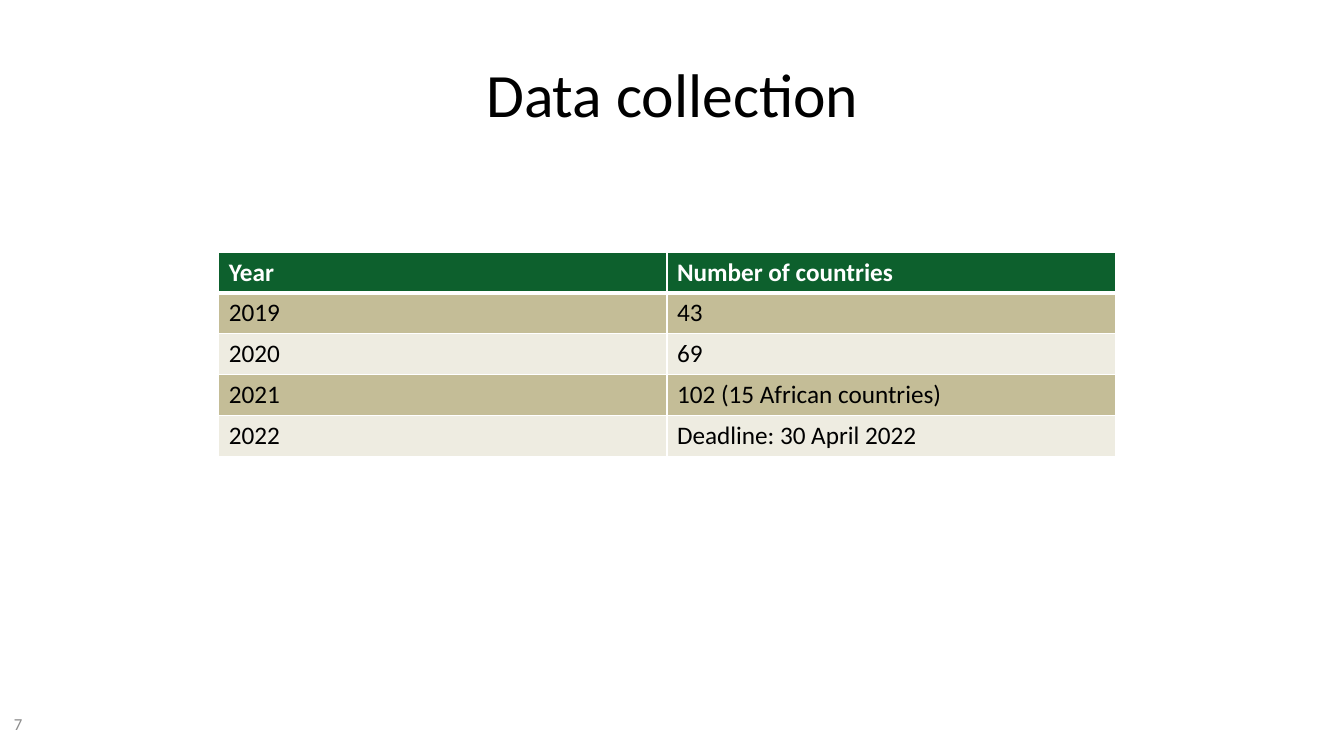
from dataclasses import dataclass

from lxml.etree import SubElement
from pptx import Presentation
from pptx.dml.color import RGBColor as RGB
from pptx.enum.text import MSO_ANCHOR as ANCHOR, PP_ALIGN as ALIGN
from pptx.oxml.ns import qn
from pptx.util import Inches, Pt


@dataclass(frozen=True)
class Theme:
    font: str = "Calibri"
    black: str = "000000"
    white: str = "FFFFFF"
    grey: str = "8C8C8C"
    green: str = "0D602D"
    bands: tuple = ("C4BD97", "EEECE1")
    title_size: int = 44
    table_size: int = 18
    number_size: int = 12
    rule: int = 1
    header_rule: int = 3


THEME = Theme()
ROWS = [
    ("Year", "Number of countries"),
    ("2019", "43"),
    ("2020", "69"),
    ("2021", "102 (15 African countries)"),
    ("2022", "Deadline: 30 April 2022"),
]


def write(tf, text, size, color, bold=False, align=ALIGN.LEFT):
    p = tf.paragraphs[0]
    p.alignment = align
    r = p.add_run()
    r.text = text
    for name, value in {"name": THEME.font, "size": Pt(size), "bold": bold}.items():
        setattr(r.font, name, value)
    r.font.color.rgb = RGB.from_string(color)


def set_borders(cell, top, bottom):
    """Draw white cell borders; must run before the cell is filled."""
    tcPr = cell._tc.get_or_add_tcPr()
    widths = {"lnL": THEME.rule, "lnR": THEME.rule, "lnT": top, "lnB": bottom}
    for tag, width in widths.items():
        ln = SubElement(tcPr, qn(f"a:{tag}"), w=str(Pt(width)))
        fill = SubElement(ln, qn("a:solidFill"))
        SubElement(fill, qn("a:srgbClr"), val=THEME.white)


def add_title(s, text, left, top, width, height):
    sp = s.shapes.title
    box = {"left": left, "top": top, "width": width, "height": height}
    for name, value in box.items():
        setattr(sp, name, Inches(value))
    sp.text_frame.vertical_anchor = ANCHOR.MIDDLE
    write(sp.text_frame, text, THEME.title_size, THEME.black, align=ALIGN.CENTER)


def add_page_number(s, number, *box):
    tf = s.shapes.add_textbox(*map(Inches, box)).text_frame
    tf.word_wrap = True
    tf.vertical_anchor = ANCHOR.MIDDLE
    write(tf, str(number), THEME.number_size, THEME.grey)


def add_country_table(s, rows, *box):
    frame = s.shapes.add_table(len(rows), len(rows[0]), *map(Inches, box))
    for i, row in enumerate(rows):
        header = i == 0
        top = THEME.header_rule if i == 1 else THEME.rule
        bottom = THEME.header_rule if header else THEME.rule
        fill = THEME.green if header else THEME.bands[(i - 1) % 2]
        color = THEME.white if header else THEME.black
        for j, text in enumerate(row):
            cell = frame.table.cell(i, j)
            set_borders(cell, top, bottom)
            cell.fill.solid()
            cell.fill.fore_color.rgb = RGB.from_string(fill)
            write(cell.text_frame, text, THEME.table_size, color, bold=header)


def main():
    prs = Presentation()
    prs.slide_width, prs.slide_height = Inches(13.33), Inches(7.5)
    s = prs.slides.add_slide(prs.slide_layouts[5])
    add_title(s, "Data collection", 0.67, 0.3, 12, 1.25)
    add_page_number(s, 7, 0.04, 6.98, 3.11, 0.4)
    add_country_table(s, ROWS, 2.17, 2.5, 8.89, 2.03)
    prs.save("out.pptx")


if __name__ == "__main__":
    main()
